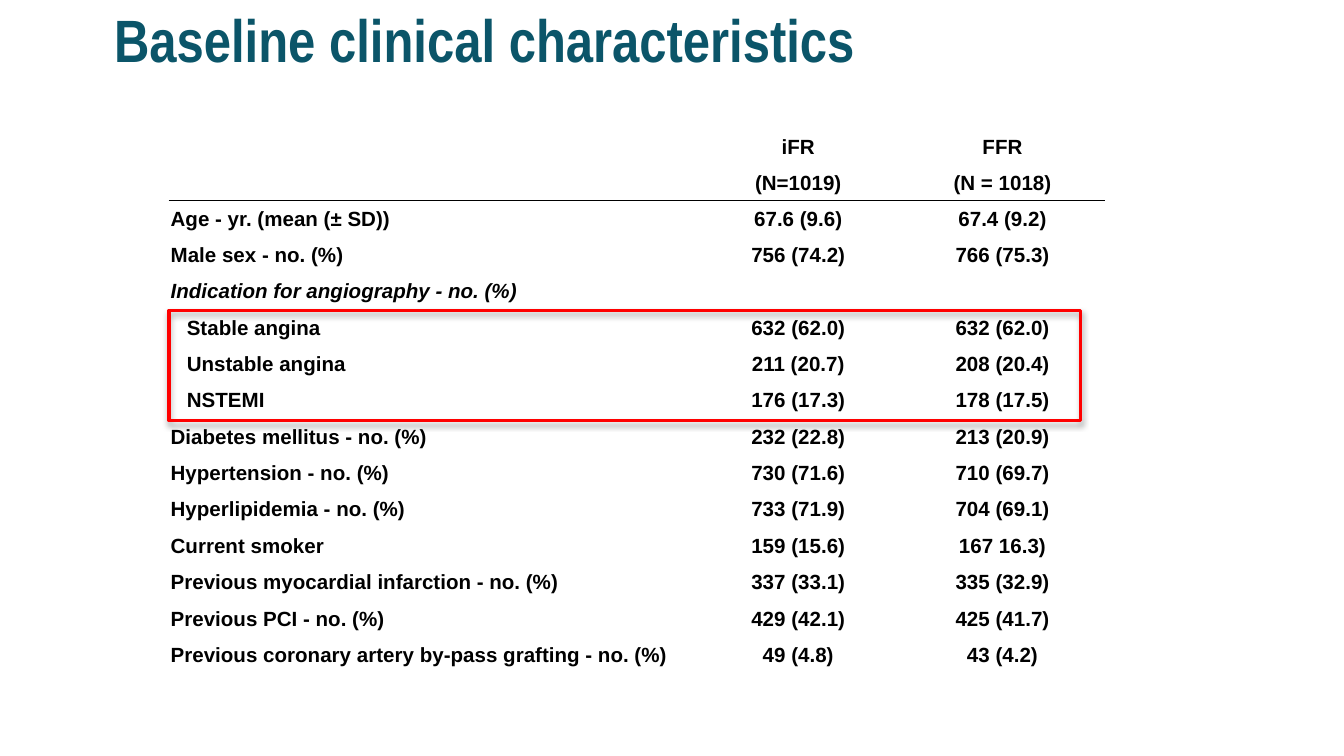
from lxml import etree
from pptx import Presentation
from pptx.dml.color import RGBColor
from pptx.enum.shapes import MSO_SHAPE as Shape
from pptx.enum.text import MSO_ANCHOR as Anchor, PP_ALIGN as Align
from pptx.oxml import parse_xml
from pptx.oxml.ns import nsdecls, qn
from pptx.util import Inches, Pt

TEAL = RGBColor(0x0B, 0x55, 0x69)
BLACK = RGBColor(0, 0, 0)
WHITE = RGBColor(255, 255, 255)
RED = RGBColor(255, 0, 0)

TABLE_SIZE = 11
HEADER_ROWS = 2
HEADER_HEIGHT = 0.53
INDENT = 0.12
COLUMN_WIDTHS = (3.92, 1.52, 1.52)
ROWS = [
    ("", "iFR", "FFR"),
    ("", "(N=1019)", "(N = 1018)"),
    ("Age - yr. (mean (± SD))", "67.6 (9.6)", "67.4 (9.2)"),
    ("Male sex - no. (%)", "756 (74.2)", "766 (75.3)"),
    ("Indication for angiography - no. (%)", "", ""),
    ("Stable angina", "632 (62.0)", "632 (62.0)"),
    ("Unstable angina", "211 (20.7)", "208 (20.4)"),
    ("NSTEMI", "176 (17.3)", "178 (17.5)"),
    ("Diabetes mellitus - no. (%)", "232 (22.8)", "213 (20.9)"),
    ("Hypertension - no. (%)", "730 (71.6)", "710 (69.7)"),
    ("Hyperlipidemia - no. (%)", "733 (71.9)", "704 (69.1)"),
    ("Current smoker", "159 (15.6)", "167 16.3)"),
    ("Previous myocardial infarction - no. (%)", "337 (33.1)", "335 (32.9)"),
    ("Previous PCI - no. (%)", "429 (42.1)", "425 (41.7)"),
    ("Previous coronary artery by-pass grafting - no. (%)", "49 (4.8)", "43 (4.2)"),
]
HEADING_ROW = 4
INDENTED_ROWS = range(5, 8)


def write_text(frame, text, *, size, font="Arial", color=BLACK, italic=False, align=Align.LEFT):
    paragraph = frame.paragraphs[0]
    paragraph.alignment = align
    if not text:
        # Keeps an empty cell from growing to the default text size
        end = etree.SubElement(paragraph._p, qn("a:endParaRPr"))
        end.set("sz", str(size * 100))
        return
    run = paragraph.add_run()
    run.text = text
    run.font.name = font
    run.font.size = Pt(size)
    run.font.bold = True
    run.font.italic = italic
    run.font.color.rgb = color


def add_border(cell, side):
    line = parse_xml(
        f'<a:{side} {nsdecls("a")} w="{Pt(0.75)}"><a:solidFill>'
        f'<a:srgbClr val="{BLACK}"/></a:solidFill></a:{side}>')
    cell._tc.get_or_add_tcPr().insert(0, line)


def add_title(slide, left, top, width, height):
    box = slide.shapes.add_textbox(Inches(left), Inches(top), Inches(width), Inches(height))
    frame = box.text_frame
    frame.word_wrap = True
    frame.vertical_anchor = Anchor.MIDDLE
    write_text(frame, "Baseline clinical characteristics", size=32, font="Arial Narrow", color=TEAL)


def add_characteristics(slide, left, top, width, height):
    frame = slide.shapes.add_table(len(ROWS), len(COLUMN_WIDTHS), Inches(left),
                                   Inches(top), Inches(width), Inches(height))
    table = frame.table
    table.first_row = table.horz_banding = False
    for column, column_width in zip(table.columns, COLUMN_WIDTHS):
        column.width = Inches(column_width)

    body_height = (height - HEADER_HEIGHT) / (len(ROWS) - HEADER_ROWS)
    for i, values in enumerate(ROWS):
        is_header = i < HEADER_ROWS
        table.rows[i].height = Inches(HEADER_HEIGHT / HEADER_ROWS if is_header else body_height)
        for j, value in enumerate(values):
            cell = table.cell(i, j)
            cell.fill.solid()
            cell.fill.fore_color.rgb = WHITE
            cell.vertical_anchor = Anchor.MIDDLE
            cell.margin_left = cell.margin_right = cell.margin_top = Inches(0.01)
            cell.margin_bottom = 0
            if j == 0 and i in INDENTED_ROWS:
                cell.margin_left = Inches(0.01 + INDENT)
            write_text(cell.text_frame, value, size=TABLE_SIZE, italic=i == HEADING_ROW,
                       align=Align.CENTER if j else Align.LEFT)
            # Rule between header and body
            if i == HEADER_ROWS - 1:
                add_border(cell, "lnB")
            elif i == HEADER_ROWS:
                add_border(cell, "lnT")


def add_highlight(slide, left, top, width, height):
    shape = slide.shapes.add_shape(Shape.RECTANGLE, Inches(left), Inches(top),
                                   Inches(width), Inches(height))
    shape.fill.background()
    shape.line.color.rgb = RED
    shape.line.width = Pt(2)
    # Soft shadow straight below the outline
    shape.shadow.inherit = False
    shape._element.spPr.find(qn("a:effectLst")).append(parse_xml(
        f'<a:outerShdw {nsdecls("a")} blurRad="{Pt(3.1)}" dist="{Pt(1.8)}" dir="5400000" '
        f'rotWithShape="0"><a:srgbClr val="{BLACK}"><a:alpha val="35000"/></a:srgbClr>'
        '</a:outerShdw>'))


def main():
    presentation = Presentation()
    # Widescreen, 16 by 9
    presentation.slide_width = Inches(10)
    presentation.slide_height = Inches(10) * 9 // 16
    slide = presentation.slides.add_slide(presentation.slide_layouts[6])
    add_title(slide, 0.75, -0.14, 7.29, 0.86)
    add_characteristics(slide, 1.26, 0.96, sum(COLUMN_WIDTHS), 4.05)
    add_highlight(slide, 1.26, 2.31, 6.78, 0.82)
    presentation.save("out.pptx")


if __name__ == "__main__":
    main()
